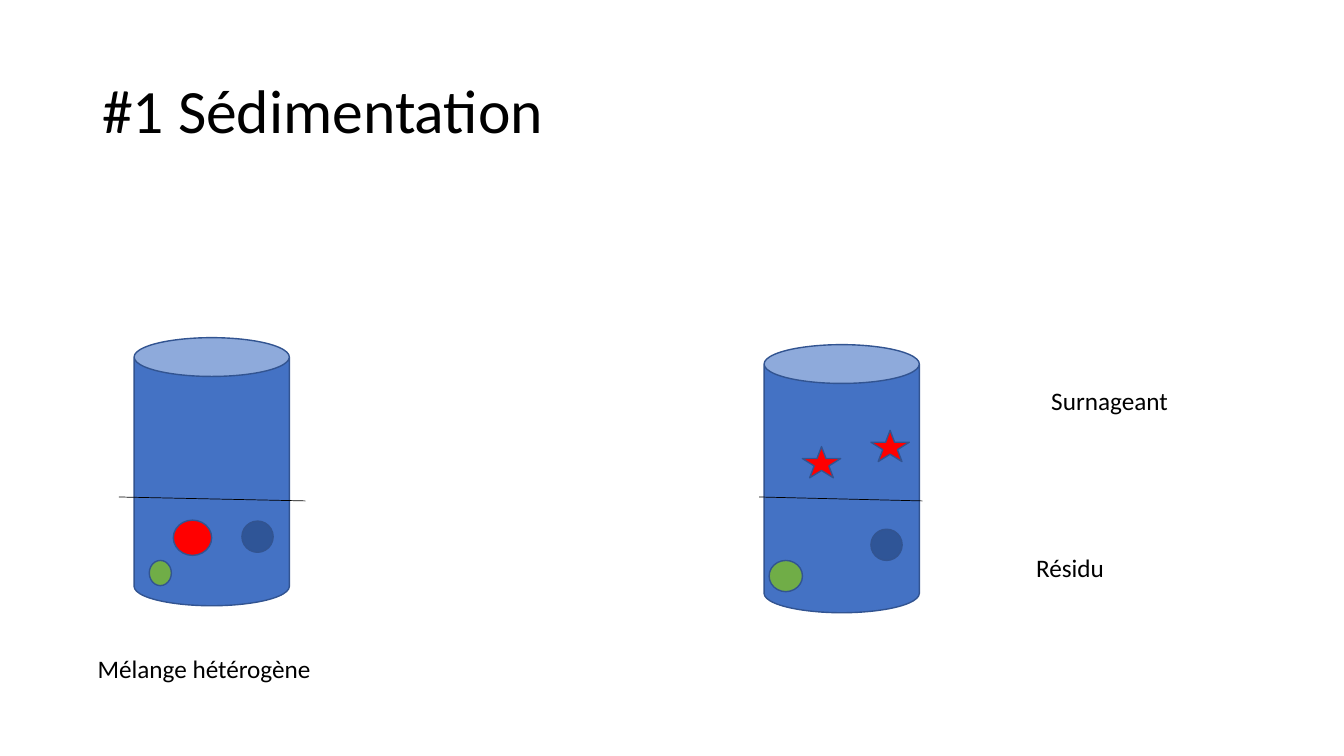
from lxml.etree import SubElement
from pptx import Presentation
from pptx.dml.color import RGBColor
from pptx.enum.shapes import MSO_CONNECTOR, MSO_SHAPE
from pptx.enum.text import MSO_ANCHOR, MSO_AUTO_SIZE
from pptx.oxml.ns import qn
from pptx.util import Pt

WATER, OUTLINE = "4472C4", "325491"
GREEN, RED, NAVY, BLACK = "70AD47", "FF0000", "2F5597", "000000"


def color(hex_string):
    return RGBColor.from_string(hex_string)


def apply_format(target, values):
    for name, value in values.items():
        setattr(target, name, value)


class Sketch:
    """Holds the current slide and its text and outline style."""

    def __init__(self, slide, font="Calibri", outline=OUTLINE):
        self.slide = slide
        self.font = font
        self.outline = outline

    def solid(self, preset, left, top, width, height, fill):
        shape = self.slide.shapes.add_shape(
            preset, Pt(left), Pt(top), Pt(width), Pt(height))
        shape.shadow.inherit = False
        shape.fill.solid()
        shape.fill.fore_color.rgb = color(fill)
        shape.line.color.rgb = color(self.outline)
        shape.line.width = Pt(1)

    def level(self, x1, y1, x2, y2):
        """Draw the thin line that parts the two layers."""
        line = self.slide.shapes.add_connector(
            MSO_CONNECTOR.STRAIGHT, Pt(x1), Pt(y1), Pt(x2), Pt(y2))
        line.line.color.rgb = color(BLACK)
        line.line.width = Pt(0.5)
        SubElement(line.element.spPr, qn("a:effectLst"))

    def text(self, wording, left, top, width, height, size=18, spacing=1.0, **frame_format):
        box = self.slide.shapes.add_textbox(Pt(left), Pt(top), Pt(width), Pt(height))
        apply_format(box.text_frame, {"word_wrap": True, **frame_format})
        paragraph = box.text_frame.paragraphs[0]
        paragraph.line_spacing = spacing
        run = paragraph.add_run()
        run.text = wording
        apply_format(run.font, {"name": self.font, "size": Pt(size)})
        run.font.color.rgb = color(BLACK)


def main():
    presentation = Presentation()
    apply_format(presentation, {"slide_width": Pt(960), "slide_height": Pt(540)})
    sketch = Sketch(presentation.slides.add_slide(presentation.slide_layouts[6]))

    sketch.text("#1 Sédimentation", 66, 28.75, 828, 104.4, size=44, spacing=0.9,
                vertical_anchor=MSO_ANCHOR.MIDDLE)

    for left, top in [(545.8, 246.2), (95.8, 241.2)]:
        sketch.solid(MSO_SHAPE.CAN, left, top, 110.9, 191.5, WATER)
    for left, right in [(85, 218.2), (542.2, 658.8)]:
        sketch.level(left, 355, right, 357.8)

    particles = [
        (106.6, 400.3, 15.8, 18, GREEN),
        (123.8, 371.5, 27.4, 25.2, RED),
        (172.8, 372.2, 22.3, 22.3, NAVY),
        (549.4, 400.3, 23.8, 22.3, GREEN),
        (622.1, 378, 22.3, 22.3, NAVY),
    ]
    for particle in particles:
        sketch.solid(MSO_SHAPE.OVAL, *particle)
    for left, top in [(622.1, 307.4), (573.1, 319)]:
        sketch.solid(MSO_SHAPE.STAR_5_POINT, left, top, 27.4, 22.3, RED)

    labels = [
        ("Surnageant", 743.8, 271.4, 152.6, 29),
        ("Résidu", 733, 391, 162.7, 30),
        ("Mélange hétérogène", 62.6, 463, 200.9, 29),
    ]
    for label in labels:
        sketch.text(*label, auto_size=MSO_AUTO_SIZE.SHAPE_TO_FIT_TEXT)

    presentation.save("out.pptx")


if __name__ == "__main__":
    main()
